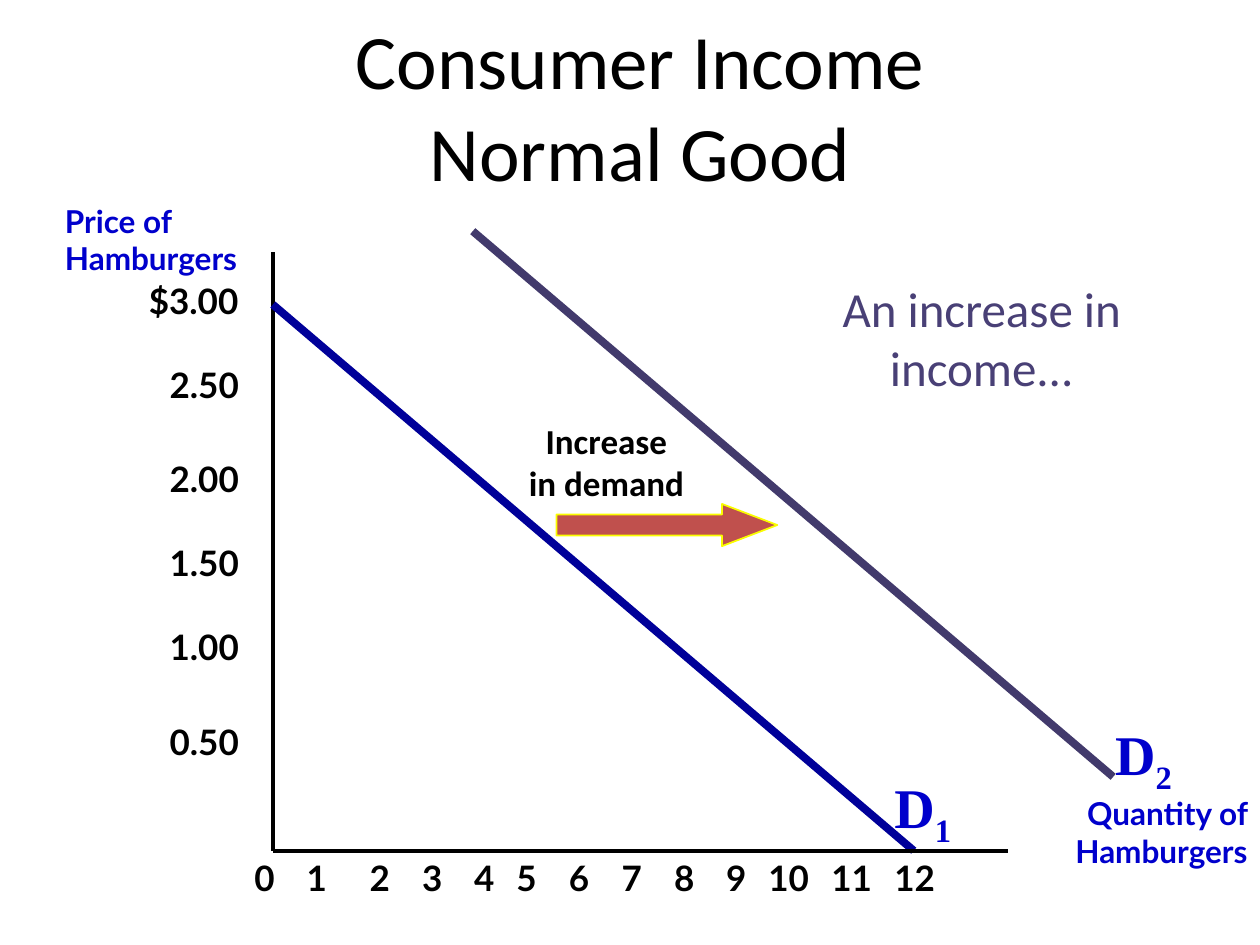
from dataclasses import dataclass

from lxml.etree import SubElement
from pptx import Presentation
from pptx.dml.color import RGBColor
from pptx.enum.shapes import MSO_CONNECTOR, MSO_SHAPE
from pptx.enum.text import MSO_ANCHOR, MSO_AUTO_SIZE, PP_ALIGN
from pptx.oxml.ns import qn
from pptx.util import Cm, Pt


@dataclass(frozen=True)
class Theme:
    black: str = "000000"
    white: str = "FFFFFF"
    label_blue: str = "0000CC"
    first_demand: str = "000099"
    second_demand: str = "423A6C"
    message: str = "494076"
    arrow_fill: str = "C0504D"
    arrow_edge: str = "FAFD00"
    body_font: str = "Calibri"
    label_font: str = "Lato"
    curve_font: str = "Times New Roman"
    title_size: float = 44
    curve_size: float = 32
    message_size: float = 28
    scale_size: float = 20
    axis_title_size: float = 18
    axis_width: float = 2.25
    curve_width: float = 4.5


THEME = Theme()
ORIGIN = (5.5, 17.15)
PRICES = {"$3.00": 5.51, "2.50": 7.2, "2.00": 9.1, "1.50": 10.8, "1.00": 12.49, "0.50": 14.4}
QUANTITY_LEFTS = (4.88, 5.93, 7.2, 8.26, 9.31, 10.16, 11.22,
                  12.28, 13.34, 14.39, 15.24, 16.51, 17.78)


def text_format(name, size, color, bold=False):
    return {"name": name, "size": Pt(size), "bold": bold, "color": color}


SCALE = text_format(THEME.label_font, THEME.scale_size, THEME.black, True)
AXIS_TITLE = text_format(THEME.label_font, THEME.axis_title_size, THEME.label_blue, True)
CURVE = text_format(THEME.curve_font, THEME.curve_size, THEME.label_blue, True)
CAPTION = text_format(THEME.body_font, THEME.scale_size, THEME.black, True)
MESSAGE = text_format(THEME.body_font, THEME.message_size, THEME.message)
TITLE = text_format(THEME.body_font, THEME.title_size, THEME.black)


def apply_format(target, values):
    for name, value in values.items():
        if name == "color":
            target.color.rgb = RGBColor.from_string(value)
        else:
            setattr(target, name, value)


def write_text(shape, lines, font, alignment=PP_ALIGN.LEFT, **frame_format):
    frame = shape.text_frame
    apply_format(frame, {
        "word_wrap": True,
        "auto_size": MSO_AUTO_SIZE.SHAPE_TO_FIT_TEXT,
        "vertical_anchor": MSO_ANCHOR.TOP,
        **frame_format,
    })
    frame.text = "\n".join(lines)
    for paragraph in frame.paragraphs:
        paragraph.alignment = alignment
        for run in paragraph.runs:
            apply_format(run.font, font)


def add_label(slide, box, lines, font, *alignment, **frame_format):
    shape = slide.shapes.add_textbox(*map(Cm, box))
    write_text(shape, lines, font, *alignment, **frame_format)
    return shape


def add_curve_label(slide, left, top, number):
    shape = add_label(slide, (left, top, 2.12, 1.6), ["D"], CURVE)
    run = shape.text_frame.paragraphs[0].add_run()
    run.text = number
    apply_format(run.font, CURVE)
    run._r.get_or_add_rPr().set("baseline", "-25000")


def add_line(slide, start, end, color, width):
    line = slide.shapes.add_connector(MSO_CONNECTOR.STRAIGHT, *map(Cm, start + end))
    apply_format(line.line, {"color": color, "width": Pt(width)})
    SubElement(line._element.spPr, qn("a:effectLst"))


def add_filled_shape(slide, preset, box, fill):
    shape = slide.shapes.add_shape(preset, *map(Cm, box))
    shape.shadow.inherit = False
    shape.fill.solid()
    shape.fill.fore_color.rgb = RGBColor.from_string(fill)
    shape.line.fill.background()
    return shape


def add_shift_arrow(slide):
    arrow = add_filled_shape(slide, MSO_SHAPE.RIGHT_ARROW, (11.22, 10.16, 4.45, 0.85),
                             THEME.arrow_fill)
    arrow.adjustments[0] = 0.5
    arrow.adjustments[1] = 1.31
    apply_format(arrow.line, {"color": THEME.arrow_edge, "width": Pt(1)})


def add_scales(slide):
    for price, top in PRICES.items():
        width = 2.54 if price.startswith("$") else 2.12
        add_label(slide, (5.29 - width, top, width, 1.09), [price], SCALE)
    for quantity, left in enumerate(QUANTITY_LEFTS):
        width = 1.27 if quantity < 9 else 1.48
        add_label(slide, (left, ORIGIN[1], width, 1.09), [str(quantity)], SCALE)


def main():
    presentation = Presentation()
    presentation.slide_width = Cm(25.4)
    presentation.slide_height = Cm(19.05)
    slide = presentation.slides.add_slide(presentation.slide_layouts[6])

    add_line(slide, (ORIGIN[0], 5.08), ORIGIN, THEME.black, THEME.axis_width)
    add_line(slide, (ORIGIN[0], 6.14), (18.42, ORIGIN[1]), THEME.first_demand, THEME.curve_width)
    add_scales(slide)
    add_label(slide, (1.06, 3.94, 6.14, 1.78), ["Price of Hamburgers"], AXIS_TITLE)
    add_label(slide, (20.32, 15.88, 5.08, 1.78), ["Quantity of Hamburgers"], AXIS_TITLE,
              PP_ALIGN.RIGHT)
    add_line(slide, (9.53, 4.66), (22.44, 15.66), THEME.second_demand, THEME.curve_width)
    add_shift_arrow(slide)
    add_label(slide, (10.46, 8.46, 3.53, 1.7), ["Increase", "in demand"], CAPTION,
              PP_ALIGN.CENTER, word_wrap=False, margin_left=0, margin_right=0,
              margin_top=0, margin_bottom=0)
    message = add_filled_shape(slide, MSO_SHAPE.RECTANGLE, (16.51, 5.5, 6.56, 2.62), THEME.white)
    write_text(message, ["An increase in income..."], MESSAGE, PP_ALIGN.CENTER)
    add_curve_label(slide, 17.78, 15.45, "1")
    add_curve_label(slide, 22.23, 14.39, "2")
    add_label(slide, (1.27, 0.42, 23.28, 3.39), ["Consumer Income\vNormal Good"], TITLE,
              PP_ALIGN.CENTER, auto_size=MSO_AUTO_SIZE.NONE, vertical_anchor=MSO_ANCHOR.MIDDLE)
    add_line(slide, ORIGIN, (20.32, ORIGIN[1]), THEME.black, THEME.axis_width)
    presentation.save("out.pptx")


if __name__ == "__main__":
    main()
